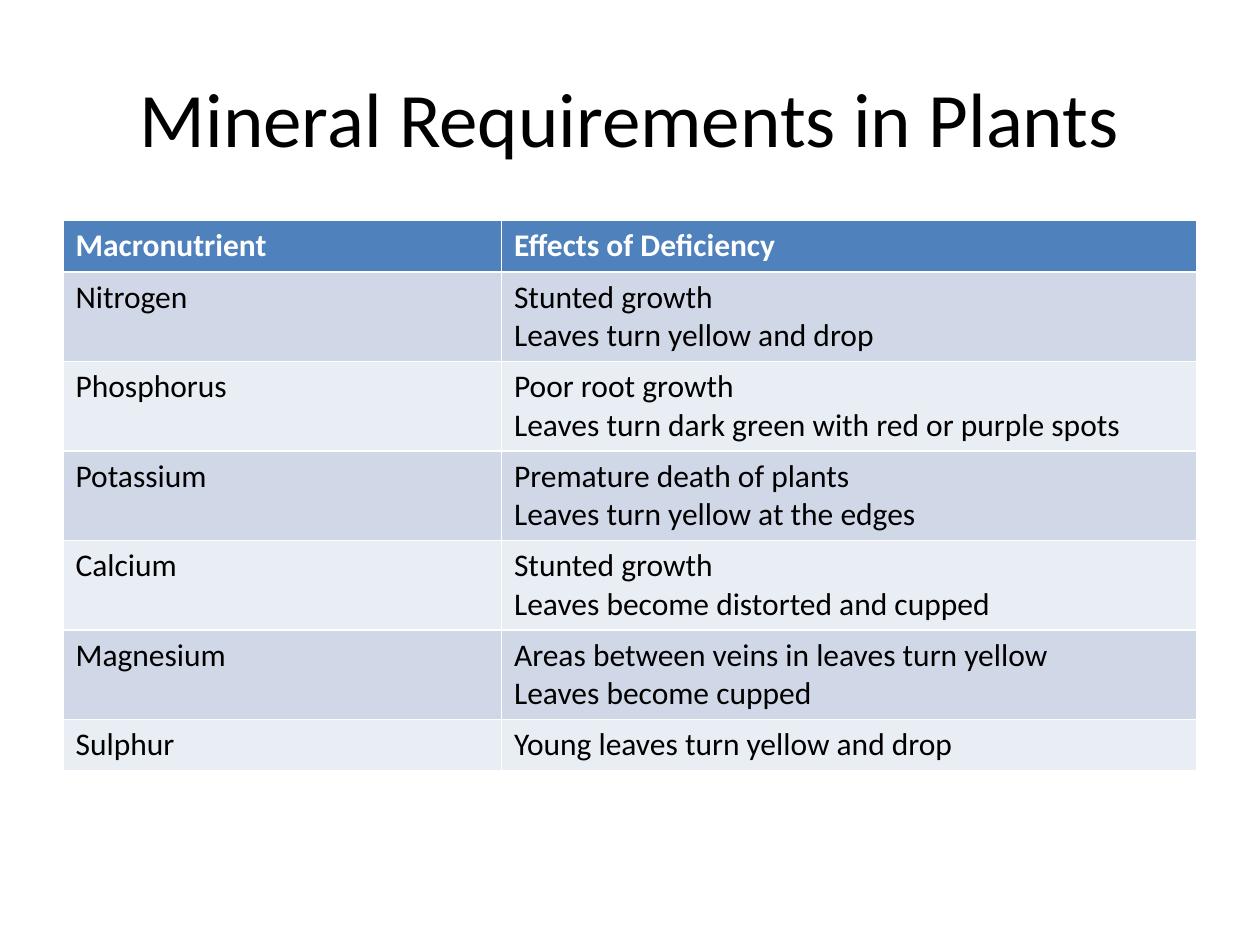
"""Build a slide with a table of plant macronutrients and deficiency effects."""
from pptx import Presentation
from pptx.dml.color import RGBColor
from pptx.enum.text import MSO_ANCHOR, PP_ALIGN
from pptx.util import Inches, Pt

TITLE = "Mineral Requirements in Plants"
HEADER = ("Macronutrient", ["Effects of Deficiency"])
NUTRIENTS = [
    ("Nitrogen", ["Stunted growth", "Leaves turn yellow and drop"]),
    ("Phosphorus", ["Poor root growth", "Leaves turn dark green with red or purple spots"]),
    ("Potassium", ["Premature death of plants", "Leaves turn yellow at the edges"]),
    ("Calcium", ["Stunted growth", "Leaves become distorted and cupped"]),
    ("Magnesium", ["Areas between veins in leaves turn yellow", "Leaves become cupped"]),
    ("Sulphur", ["Young leaves turn yellow and drop"]),
]

FONT = "Calibri"
BLACK = RGBColor(0x00, 0x00, 0x00)
WHITE = RGBColor(0xFF, 0xFF, 0xFF)
HEADER_BLUE = RGBColor(0x4F, 0x81, 0xBD)
BANDS = [RGBColor(0xD0, 0xD8, 0xE8), RGBColor(0xE9, 0xED, 0xF4)]

MARGIN = 0.5
COLUMNS = [3.48, 5.52]
CELL_PADDING, LINE_HEIGHT = 0.11, 0.3


def style_text(frame, size, color, bold=False):
    for paragraph in frame.paragraphs:
        for span in paragraph.runs:
            span.font.name = FONT
            span.font.size = Pt(size)
            span.font.bold = bold
            span.font.color.rgb = color


def add_title(page):
    box = page.shapes.add_textbox(
        Inches(MARGIN), Inches(0.3), Inches(sum(COLUMNS)), Inches(1.25))
    frame = box.text_frame
    frame.word_wrap = True
    frame.vertical_anchor = MSO_ANCHOR.MIDDLE
    frame.text = TITLE
    frame.paragraphs[0].alignment = PP_ALIGN.CENTER
    style_text(frame, 44, BLACK)


def add_nutrient_table(page):
    rows = [HEADER] + NUTRIENTS
    heights = [CELL_PADDING + LINE_HEIGHT * len(effects) for _, effects in rows]
    table = page.shapes.add_table(
        len(rows), len(COLUMNS), Inches(MARGIN), Inches(1.75),
        Inches(sum(COLUMNS)), Inches(sum(heights))).table
    for column, width in zip(table.columns, COLUMNS):
        column.width = Inches(width)
    for index, (name, effects) in enumerate(rows):
        table.rows[index].height = Inches(heights[index])
        is_header = index == 0
        for cell, text in zip(table.rows[index].cells, (name, "\n".join(effects))):
            cell.fill.solid()
            cell.fill.fore_color.rgb = HEADER_BLUE if is_header else BANDS[(index - 1) % 2]
            cell.text_frame.text = text
            style_text(cell.text_frame, 18, WHITE if is_header else BLACK, is_header)


def main():
    deck = Presentation()
    deck.slide_width, deck.slide_height = Inches(10), Inches(7.5)
    page = deck.slides.add_slide(deck.slide_layouts[6])
    add_title(page)
    add_nutrient_table(page)
    deck.save("out.pptx")


if __name__ == "__main__":
    main()
